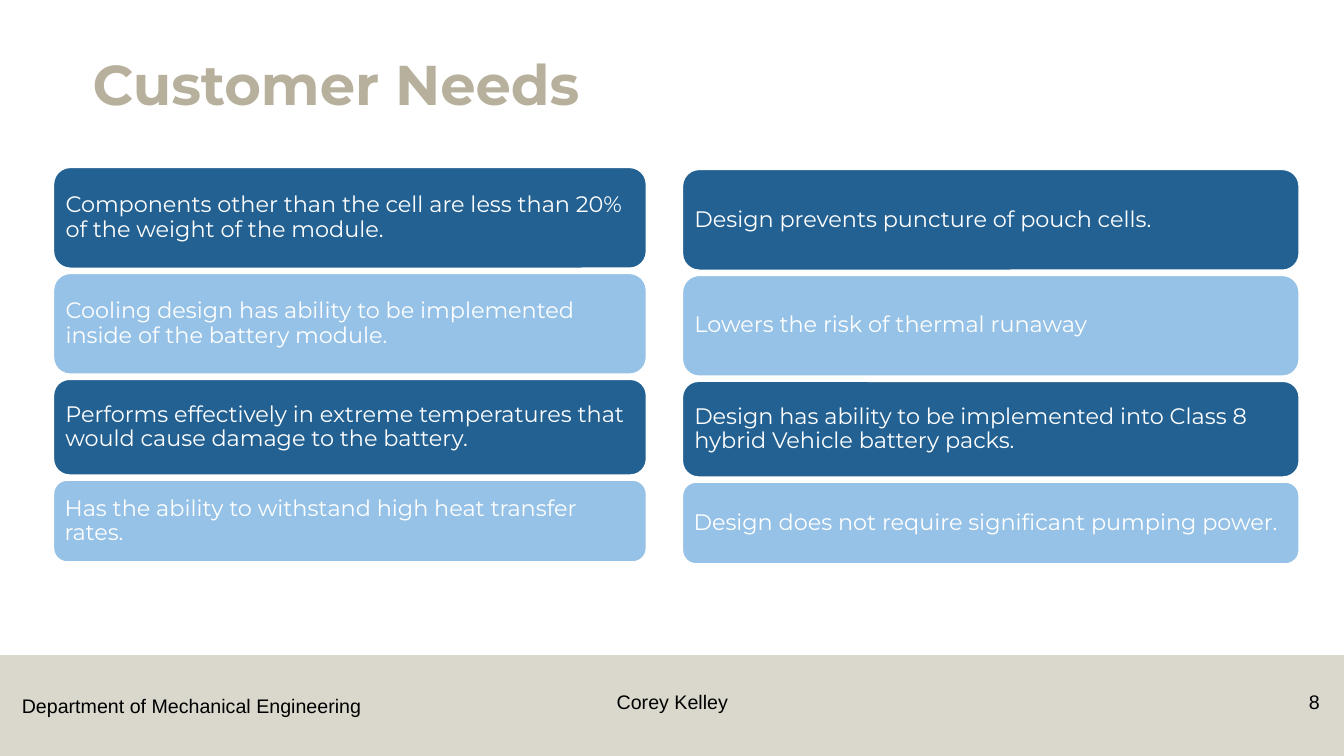
from lxml import etree
from pptx import Presentation
from pptx.dml.color import RGBColor
from pptx.enum.shapes import MSO_SHAPE
from pptx.enum.text import MSO_ANCHOR, MSO_AUTO_SIZE, PP_ALIGN
from pptx.oxml.ns import qn
from pptx.util import Cm, Pt

RECTANGLE, ROUNDED = MSO_SHAPE.RECTANGLE, MSO_SHAPE.ROUNDED_RECTANGLE
LEFT, CENTER, RIGHT = PP_ALIGN.LEFT, PP_ALIGN.CENTER, PP_ALIGN.RIGHT
TOP, MIDDLE, BOTTOM = MSO_ANCHOR.TOP, MSO_ANCHOR.MIDDLE, MSO_ANCHOR.BOTTOM
NO_AUTO_SIZE = MSO_AUTO_SIZE.NONE

WHITE = RGBColor(0xFF, 0xFF, 0xFF)
BLACK = RGBColor(0x00, 0x00, 0x00)
TAN = RGBColor(0xB7, 0xB0, 0x9C)
DARK_BLUE = RGBColor(0x23, 0x61, 0x92)
LIGHT_BLUE = RGBColor(0x95, 0xC2, 0xE6)

HEADING_FONT, FOOTER_FONT = "Montserrat", "Arial"
CARD_HEIGHTS = (2.54, 2.54, 2.41, 2.06)
CARD_GAP = 0.13
CARD_INSET = Cm(0.18)

MODULE_NEEDS = (
    "Components other than the cell are less than 20% of the weight of the module.",
    "Cooling design has ability to be implemented inside of the battery module.",
    "Performs effectively in extreme temperatures that would cause damage to the battery.",
    "Has the ability to withstand high heat transfer rates.",
)
SAFETY_NEEDS = (
    "Design prevents puncture of pouch cells.",
    "Lowers the risk of thermal runaway",
    "Design has ability to be implemented into Class 8 hybrid Vehicle battery packs.",
    "Design does not require significant pumping power.",
)


def write_text(shape, text, *, font=HEADING_FONT, size=16, color=WHITE, bold=False,
               align=LEFT, anchor=MIDDLE, line_spacing=0.9, wrap=True):
    """Put one formatted paragraph in a shape."""
    frame = shape.text_frame
    frame.auto_size = NO_AUTO_SIZE
    frame.word_wrap = wrap
    frame.vertical_anchor = anchor
    paragraph = frame.paragraphs[0]
    paragraph.text = text
    paragraph.alignment = align
    paragraph.line_spacing = line_spacing
    paragraph.font.name = font
    paragraph.font.size = Pt(size)
    paragraph.font.bold = bold
    paragraph.font.color.rgb = color


def add_block(slide, preset, left, top, width, height, color):
    """Add a filled shape without a shadow."""
    shape = slide.shapes.add_shape(preset, Cm(left), Cm(top), Cm(width), Cm(height))
    shape.shadow.inherit = False
    shape.fill.solid()
    shape.fill.fore_color.rgb = color
    return shape


def add_footer_band(slide):
    """Add the half-transparent band at the foot of the slide."""
    band = add_block(slide, RECTANGLE, 0, 16.51, 33.87, 2.54, TAN)
    band.line.fill.background()
    color = band.fill._xPr.find(qn("a:solidFill"))[0]
    etree.SubElement(color, qn("a:alpha")).set("val", "50000")


def add_footer_text(slide, text, left, top, width, height, **text_format):
    """Add one text box on the footer band."""
    box = slide.shapes.add_textbox(Cm(left), Cm(top), Cm(width), Cm(height))
    write_text(box, text, font=FOOTER_FONT, size=14, color=BLACK, anchor=TOP,
               line_spacing=1.0, **text_format)


def set_title(slide, text):
    """Place and format the title placeholder."""
    title = slide.shapes.title
    title.left, title.top = Cm(2.08), Cm(0.33)
    title.width, title.height = Cm(29.21), Cm(2.77)
    write_text(title, text, size=40, color=TAN, bold=True, anchor=BOTTOM)


def add_need_column(slide, needs, left, top, width):
    """Stack rounded cards in alternating blues."""
    for index, (need, height) in enumerate(zip(needs, CARD_HEIGHTS)):
        color = LIGHT_BLUE if index % 2 else DARK_BLUE
        card = add_block(slide, ROUNDED, left, top, width, height, color)
        card.line.color.rgb = WHITE
        card.line.width = Pt(1)
        frame = card.text_frame
        frame.margin_left = frame.margin_right = CARD_INSET
        frame.margin_top = frame.margin_bottom = CARD_INSET
        write_text(card, need)
        top += height + CARD_GAP


def main():
    """Build and save the customer needs slide."""
    presentation = Presentation()
    presentation.slide_width, presentation.slide_height = Cm(33.87), Cm(19.05)
    slide = presentation.slides.add_slide(presentation.slide_layouts[5])
    add_footer_band(slide)
    add_footer_text(slide, "Department of Mechanical Engineering",
                    0.3, 17.35, 9.12, 0.86, wrap=False)
    set_title(slide, "Customer Needs")
    add_footer_text(slide, "Corey Kelley", 11.23, 17.25, 11.43, 1.02, align=CENTER)
    add_footer_text(slide, "8", 31.55, 17.25, 1.96, 1.02, align=RIGHT)
    add_need_column(slide, MODULE_NEEDS, 1.35, 4.22, 14.94)
    add_need_column(slide, SAFETY_NEEDS, 17.2, 4.27, 15.54)
    presentation.save("out.pptx")


if __name__ == "__main__":
    main()
